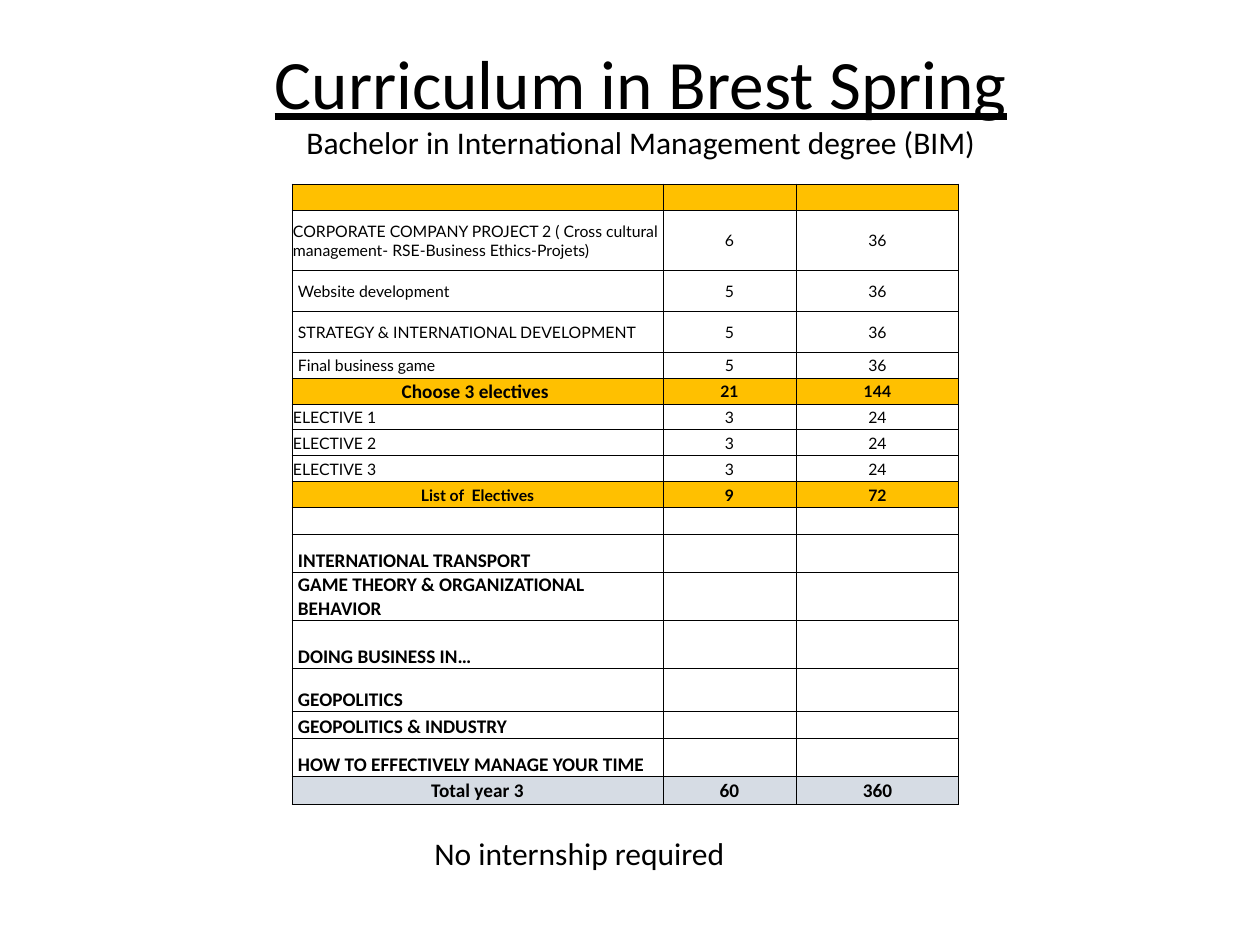
from lxml import etree
from pptx import Presentation
from pptx.dml.color import RGBColor
from pptx.enum.text import MSO_ANCHOR, MSO_AUTO_SIZE, PP_ALIGN
from pptx.oxml.ns import qn
from pptx.util import Pt

LEFT, CENTER = PP_ALIGN.LEFT, PP_ALIGN.CENTER
MIDDLE, BOTTOM = MSO_ANCHOR.MIDDLE, MSO_ANCHOR.BOTTOM
NO_AUTOFIT, GROW = MSO_AUTO_SIZE.NONE, MSO_AUTO_SIZE.SHAPE_TO_FIT_TEXT
TITLE_ONLY = 5
EMU_PER_PX = 914400 / 126
COLORS = {"ink": "000000", "paper": "FFFFFF", "gold": "FFC000", "total": "D6DCE4"}
TIGHT, INDENTED = (1, 1, 1, 0), (6, 0, 6, 0)

ROW_STYLES = {
    "header": {"fill": "gold"},
    "project": {"fill": "paper"},
    "course": {"fill": "paper", "insets": INDENTED, "spacing": 1.07},
    "choice": {"fill": "gold", "align": CENTER, "bold": True, "font": "Calibri", "size": 11},
    "list": {"fill": "gold", "align": CENTER, "bold": True},
    "gap": {"fill": None},
    "elective": {"fill": "paper", "insets": INDENTED, "anchor": BOTTOM,
                 "bold": True, "font": "Calibri", "size": 11},
    "total": {"fill": "total", "align": CENTER, "bold": True, "font": "Calibri",
              "size": 11, "figure_font": "Calibri", "figure_size": 11, "bottom_line": 1},
}
COLUMN_WIDTHS = (371, 133, 163)
CURRICULUM = [
    ("header", 26, "", "", ""),
    ("project", 60, "CORPORATE COMPANY PROJECT 2 ( Cross cultural management- "
                    "RSE-Business Ethics-Projets)", "6", "36"),
    ("course", 41, "Website development", "5", "36"),
    ("course", 41, "STRATEGY & INTERNATIONAL DEVELOPMENT", "5", "36"),
    ("course", 26, "Final business game", "5", "36"),
    ("choice", 26, "Choose 3 electives ", "21", "144"),
    ("project", 26, "ELECTIVE 1", "3", "24"),
    ("project", 26, "ELECTIVE 2", "3", "24"),
    ("project", 26, "ELECTIVE 3", "3", "24"),
    ("list", 26, "List of  Electives", "9", "72"),
    ("gap", 27, "", "", ""),
    ("elective", 38, "INTERNATIONAL TRANSPORT", "", ""),
    ("elective", 47, "GAME THEORY & ORGANIZATIONAL BEHAVIOR", "", ""),
    ("elective", 48, "DOING BUSINESS IN…", "", ""),
    ("elective", 43, "GEOPOLITICS", "", ""),
    ("elective", 27, "GEOPOLITICS & INDUSTRY", "", ""),
    ("elective", 38, "HOW TO EFFECTIVELY MANAGE YOUR TIME", "", ""),
    ("total", 28, "Total year 3", "60", "360"),
]


def px(length):
    return round(length * EMU_PER_PX)


def rgb(name):
    return RGBColor.from_string(COLORS[name])


def write(paragraph, text, font="Calibri", size=18, bold=False, underline=False,
          color="ink", align=LEFT, spacing=None):
    paragraph.alignment = align
    if spacing:
        paragraph.line_spacing = spacing
    if not text:
        etree.SubElement(paragraph._p, qn("a:endParaRPr"), sz=str(size * 100))
        return
    run = paragraph.add_run()
    run.text = text
    run.font.name, run.font.size = font, Pt(size)
    run.font.bold, run.font.underline = bold, underline
    run.font.color.rgb = rgb(color)


class SlideBuilder:
    """Holds the slide and draws each kind of element on it."""

    def __init__(self, slide):
        self.slide = slide

    def title(self, box, heading, subtitle):
        title = self.slide.shapes.title
        title.left, title.top, title.width, title.height = map(px, box)
        frame = title.text_frame
        frame.auto_size, frame.vertical_anchor = NO_AUTOFIT, MIDDLE
        frame.margin_top, frame.margin_bottom = 0, px(28)
        paragraph = frame.paragraphs[0]
        write(paragraph, heading, size=39.6, underline=True, align=CENTER)
        paragraph.add_line_break()
        write(paragraph, subtitle, align=CENTER)

    def note(self, box, text):
        frame = self.slide.shapes.add_textbox(*map(px, box)).text_frame
        frame.word_wrap, frame.auto_size = False, GROW
        write(frame.paragraphs[0], text)

    def borders(self, cell, bottom_line):
        properties = cell._tc.get_or_add_tcPr()
        for side in "LRTB":
            width = bottom_line if side == "B" else 0.5
            line = etree.SubElement(properties, qn(f"a:ln{side}"), w=str(Pt(width)))
            fill = etree.SubElement(line, qn("a:solidFill"))
            etree.SubElement(fill, qn("a:srgbClr"), val=COLORS["ink"])

    def cell(self, cell, text, fill, insets=TIGHT, anchor=MIDDLE, bottom_line=0.5,
             font="Lato", size=9, **text_format):
        self.borders(cell, bottom_line)
        if fill:
            cell.fill.solid()
            cell.fill.fore_color.rgb = rgb(fill)
        else:
            cell.fill.background()
        cell.margin_left, cell.margin_top, cell.margin_right, cell.margin_bottom = map(px, insets)
        cell.vertical_anchor = anchor
        write(cell.text_frame.paragraphs[0], text, font=font, size=size, **text_format)

    def table(self, left, top, widths, rows):
        height = sum(row[1] for row in rows)
        box = map(px, (left, top, sum(widths), height))
        table = self.slide.shapes.add_table(len(rows), len(widths), *box).table
        table.first_row = table.horz_banding = False
        for column, width in zip(table.columns, widths):
            column.width = px(width)
        for index, (kind, row_height, label, *figures) in enumerate(rows):
            table.rows[index].height = px(row_height)
            style = dict(ROW_STYLES[kind])
            figure_style = {
                "fill": style["fill"], "align": CENTER, "bold": style.get("bold", False),
                "font": style.pop("figure_font", "Lato"),
                "size": style.pop("figure_size", 9),
                "bottom_line": style.get("bottom_line", 0.5),
            }
            self.cell(table.cell(index, 0), label, **style)
            for column, figure in enumerate(figures, start=1):
                self.cell(table.cell(index, column), figure, **figure_style)


def main():
    deck = Presentation()
    deck.slide_width, deck.slide_height = px(1260), px(945)
    builder = SlideBuilder(deck.slides.add_slide(deck.slide_layouts[TITLE_ONLY]))
    builder.title((74, 76, 1134, 77), "Curriculum in Brest Spring",
                  "Bachelor in International Management degree (BIM)")
    builder.table(292, 184, COLUMN_WIDTHS, CURRICULUM)
    builder.note((422, 828, 319, 50), "No internship required")
    deck.save("out.pptx")


if __name__ == "__main__":
    main()
